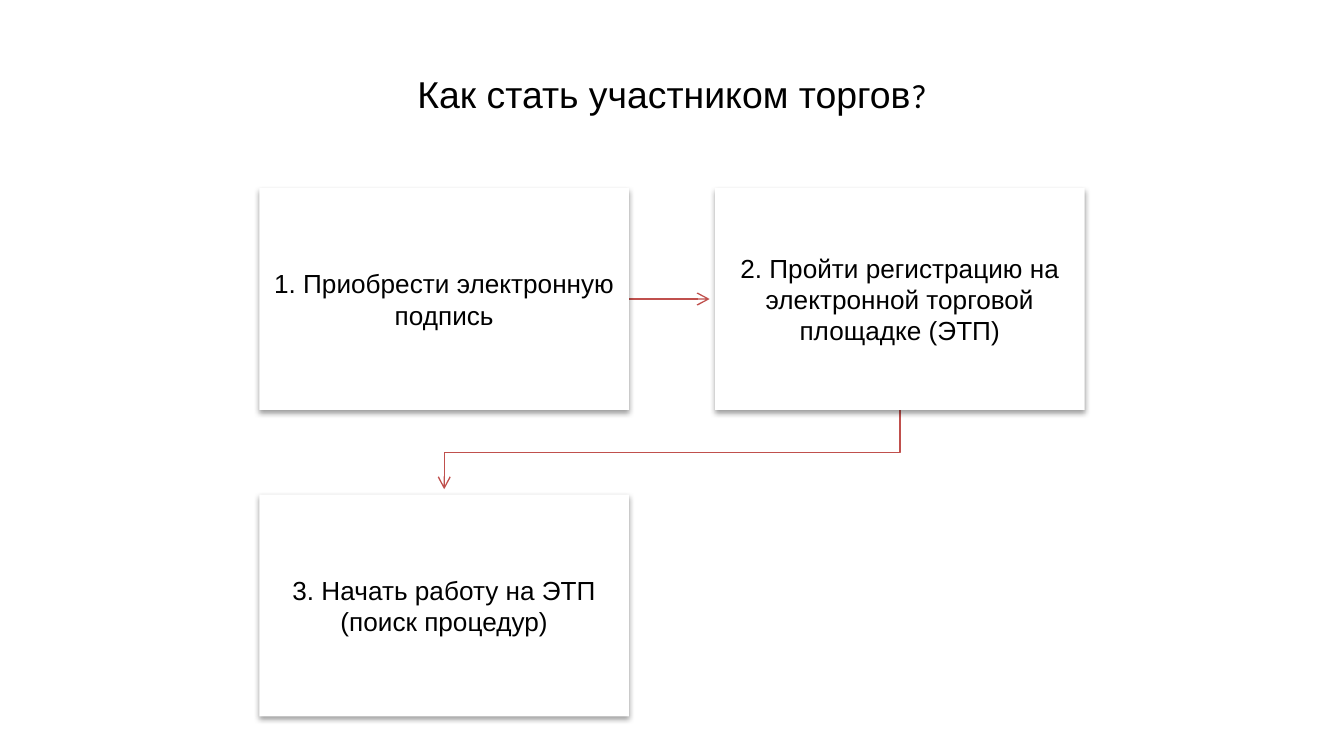
"""Build a slide with the three steps to becoming a bidder."""
from dataclasses import dataclass

from lxml import etree
from pptx import Presentation
from pptx.dml.color import RGBColor
from pptx.enum.shapes import MSO_CONNECTOR, MSO_SHAPE
from pptx.enum.text import MSO_ANCHOR, MSO_AUTO_SIZE, PP_ALIGN
from pptx.oxml.ns import qn
from pptx.util import Inches, Pt

RECTANGLE = MSO_SHAPE.RECTANGLE
STRAIGHT = MSO_CONNECTOR.STRAIGHT
CENTER = PP_ALIGN.CENTER
TOP, MIDDLE = MSO_ANCHOR.TOP, MSO_ANCHOR.MIDDLE
NO_AUTOFIT = MSO_AUTO_SIZE.NONE

COLORS = {"box": "FFFFFF", "text": "000000", "arrow": "C0504D", "shadow": "000000"}
SLIDE_WIDTH = 10
SLIDE_HEIGHT = SLIDE_WIDTH * 9 / 16
BOX_WIDTH, BOX_HEIGHT = 2.75, 1.65
GRID_LEFT, GRID_TOP = 1.93, 1.4
COLUMN_STEP, ROW_STEP = 3.39, 2.28
ARROW_GAP = 0.04


@dataclass(frozen=True)
class Step:
    text: str
    column: int
    row: int

    @property
    def left(self) -> float:
        return GRID_LEFT + self.column * COLUMN_STEP

    @property
    def top(self) -> float:
        return GRID_TOP + self.row * ROW_STEP

    @property
    def center(self) -> float:
        return self.left + BOX_WIDTH / 2

    @property
    def middle(self) -> float:
        return self.top + BOX_HEIGHT / 2

    @property
    def right(self) -> float:
        return self.left + BOX_WIDTH

    @property
    def bottom(self) -> float:
        return self.top + BOX_HEIGHT


STEPS = [
    Step("1. Приобрести электронную подпись", 0, 0),
    Step("2. Пройти регистрацию на электронной торговой площадке (ЭТП)", 1, 0),
    Step("3. Начать работу на ЭТП (поиск процедур)", 0, 1),
]


def rgb(name: str) -> RGBColor:
    return RGBColor.from_string(COLORS[name])


def format_run(run, size: float, font_name: str = "Arial") -> None:
    run.font.size = Pt(size)
    run.font.name = font_name
    run.font.color.rgb = rgb("text")


def set_margins(text_frame, margin: float) -> None:
    text_frame.margin_left = text_frame.margin_right = Inches(margin)
    text_frame.margin_top = text_frame.margin_bottom = Inches(margin)


def add_title(slide) -> None:
    title = slide.shapes.title
    title.left, title.top = Inches(2.33), Inches(0.53)
    title.width, title.height = Inches(5.34), Inches(0.73)
    text_frame = title.text_frame
    text_frame.text = "Как стать участником торгов"
    text_frame.auto_size = NO_AUTOFIT
    text_frame.vertical_anchor = TOP
    set_margins(text_frame, 0)
    paragraph = text_frame.paragraphs[0]
    paragraph.alignment = CENTER
    format_run(paragraph.runs[0], 20)
    question_mark = paragraph.add_run()
    question_mark.text = "?"
    format_run(question_mark, 18, "Calibri")


def add_soft_shadow(shape) -> None:
    shape.shadow.inherit = False
    effects = shape.element.spPr.find(qn("a:effectLst"))
    shadow = etree.SubElement(
        effects, qn("a:outerShdw"), blurRad=str(Pt(3.1)), dist=str(Pt(1.6)),
        dir="5400000", rotWithShape="0")
    color = etree.SubElement(shadow, qn("a:srgbClr"), val=COLORS["shadow"])
    etree.SubElement(color, qn("a:alpha"), val="38000")


def add_box(slide, step: Step) -> None:
    box = slide.shapes.add_shape(
        RECTANGLE, Inches(step.left), Inches(step.top),
        Inches(BOX_WIDTH), Inches(BOX_HEIGHT))
    box.fill.solid()
    box.fill.fore_color.rgb = rgb("box")
    box.line.fill.background()
    add_soft_shadow(box)
    text_frame = box.text_frame
    text_frame.text = step.text
    text_frame.word_wrap = True
    text_frame.vertical_anchor = MIDDLE
    set_margins(text_frame, 0.1)
    paragraph = text_frame.paragraphs[0]
    paragraph.alignment = CENTER
    format_run(paragraph.runs[0], 14)


def format_arrow(shape) -> None:
    shape.line.color.rgb = rgb("arrow")
    shape.line.width = Pt(0.75)
    properties = shape.element.spPr
    etree.SubElement(properties.find(qn("a:ln")), qn("a:tailEnd"), type="arrow")
    etree.SubElement(properties, qn("a:effectLst"))


def add_straight_arrow(slide, source: Step, target: Step) -> None:
    arrow = slide.shapes.add_connector(
        STRAIGHT, Inches(source.right), Inches(source.middle),
        Inches(target.left - ARROW_GAP), Inches(target.middle))
    format_arrow(arrow)


def add_elbow_arrow(slide, source: Step, target: Step) -> None:
    bend = (source.bottom + target.top) / 2
    points = [(source.center, bend), (target.center, bend),
              (target.center, target.top - ARROW_GAP)]
    builder = slide.shapes.build_freeform(Inches(source.center), Inches(source.bottom))
    builder.add_line_segments([(Inches(x), Inches(y)) for x, y in points], close=False)
    arrow = builder.convert_to_shape()
    arrow.fill.background()
    format_arrow(arrow)


def main() -> None:
    presentation = Presentation()
    presentation.slide_width = Inches(SLIDE_WIDTH)
    presentation.slide_height = Inches(SLIDE_HEIGHT)
    slide = presentation.slides.add_slide(presentation.slide_layouts[5])
    add_title(slide)
    signature, registration, work = STEPS
    add_straight_arrow(slide, signature, registration)
    add_elbow_arrow(slide, registration, work)
    for step in STEPS:
        add_box(slide, step)
    presentation.save("out.pptx")


if __name__ == "__main__":
    main()
